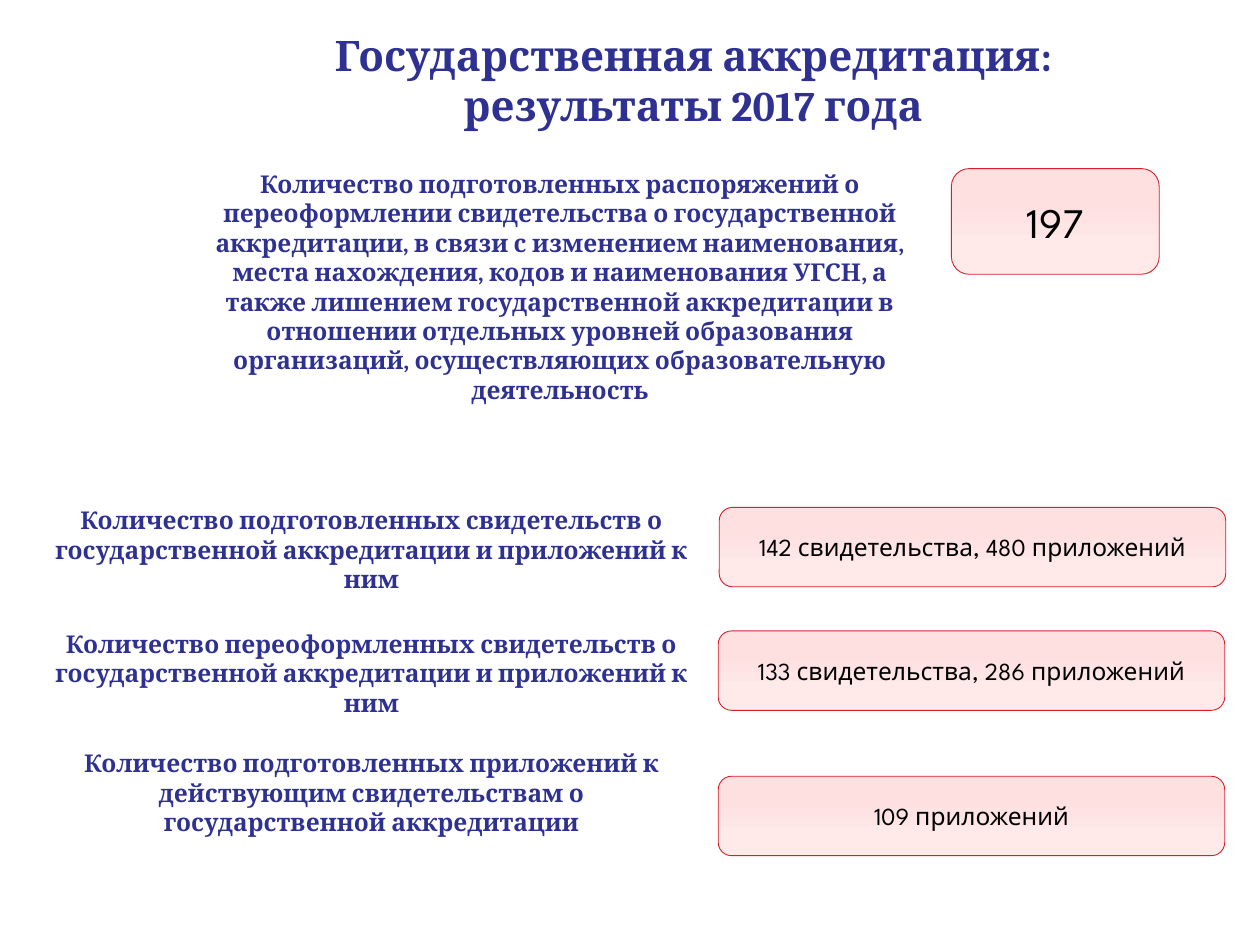
from dataclasses import dataclass

from lxml.etree import SubElement
from pptx import Presentation
from pptx.dml.color import RGBColor as RGB
from pptx.enum.shapes import MSO_SHAPE as Shape
from pptx.enum.text import MSO_ANCHOR as Anchor, MSO_AUTO_SIZE as AutoSize, PP_ALIGN as Align
from pptx.oxml.ns import qn
from pptx.util import Cm, Pt


@dataclass(frozen=True)
class Theme:
    heading_font: str = "Cambria"
    value_font: str = "League Spartan"
    heading: RGB = RGB(0x2E, 0x31, 0x92)
    value: RGB = RGB(0, 0, 0)
    border: RGB = RGB(0xDA, 0x1F, 0x28)
    gradient: tuple = ((0.25, RGB(0xFF, 0xE9, 0xE9)), (0.72, RGB(0xFF, 0xE0, 0xE1)))
    large: int = 24
    normal: int = 14


THEME = Theme()

TITLE = "Государственная аккредитация: результаты 2017 года"
ORDERS = (
    "Количество подготовленных распоряжений о переоформлении свидетельства "
    "о государственной аккредитации, в связи с изменением наименования, места "
    "нахождения, кодов и наименования УГСН, а также лишением государственной "
    "аккредитации в отношении отдельных уровней образования организаций, "
    "осуществляющих образовательную деятельность"
)
# Label, label top and height, value, value left and top (cm)
RESULTS = (
    ("Количество подготовленных свидетельств о государственной аккредитации и приложений к ним",
     10.06, 1.45, "142 свидетельства, 480 приложений", 14.5, 10.23),
    ("Количество переоформленных свидетельств о государственной аккредитации и приложений к ним",
     12.55, 1.45, "133 свидетельства, 286 приложений", 14.48, 12.72),
    ("Количество подготовленных приложений к действующим свидетельствам о государственной аккредитации",
     14.96, 2.06, "109 приложений", 14.48, 15.65),
)


def add_text_shadow(run):
    """Soft shadow below the letters, placed ahead of the typeface."""
    properties = run.font._element if hasattr(run.font, "_element") else run._r.get_or_add_rPr()
    effects = SubElement(properties, qn("a:effectLst"))
    shadow = SubElement(effects, qn("a:outerShdw"), blurRad="38100", dist="38100",
                        dir="2700000", algn="tl")
    black = SubElement(shadow, qn("a:srgbClr"), val="000000")
    SubElement(black, qn("a:alpha"), val="43000")
    properties.find(qn("a:solidFill")).addnext(effects)


def write(frame, text, *, size, font, color, bold=False, shadow=False, anchor=Anchor.TOP):
    frame.word_wrap = True
    frame.auto_size = AutoSize.NONE
    frame.vertical_anchor = anchor
    paragraph = frame.paragraphs[0]
    paragraph.alignment = Align.CENTER
    run = paragraph.add_run()
    run.text = text
    run.font.size = Pt(size)
    run.font.name = font
    run.font.bold = bold
    run.font.color.rgb = color
    if shadow:
        add_text_shadow(run)


def write_heading(frame, text, size):
    write(frame, text, size=size, font=THEME.heading_font, color=THEME.heading,
          bold=True, shadow=True)


def add_title(slide, text, left, top, width, height):
    title = slide.shapes.title
    title.left, title.top, title.width, title.height = map(Cm, (left, top, width, height))
    write_heading(title.text_frame, text, THEME.large)


def add_label(slide, text, left, top, width, height):
    label = slide.shapes.add_textbox(*map(Cm, (left, top, width, height)))
    write_heading(label.text_frame, text, THEME.normal)


def add_value(slide, text, left, top, width, height, size=THEME.normal):
    card = slide.shapes.add_shape(Shape.ROUNDED_RECTANGLE, *map(Cm, (left, top, width, height)))
    card.shadow.inherit = False
    card.fill.gradient()
    card.fill.gradient_angle = 90
    for stop, (position, color) in zip(card.fill.gradient_stops, THEME.gradient):
        stop.position = position
        stop.color.rgb = color
    card.line.color.rgb = THEME.border
    card.line.width = Pt(0.5)
    write(card.text_frame, text, size=size, font=THEME.value_font, color=THEME.value,
          anchor=Anchor.MIDDLE)


def main():
    deck = Presentation()
    deck.slide_width, deck.slide_height = Cm(25.4), Cm(19.05)
    slide = deck.slides.add_slide(deck.slide_layouts.get_by_name("Title Only"))

    # Heading
    add_title(slide, TITLE, 5.77, 0.46, 16.41, 2.31)

    # Reissue orders
    add_label(slide, ORDERS, 4.09, 3.28, 14.4, 4.45)
    add_value(slide, "197", 19.18, 3.4, 4.19, 2.13, size=THEME.large)

    # Certificates and annexes
    for label, label_top, label_height, value, value_left, value_top in RESULTS:
        add_label(slide, label, 0.71, label_top, 13.56, label_height)
        add_value(slide, value, value_left, value_top, 10.21, 1.6)

    deck.save("out.pptx")


if __name__ == "__main__":
    main()
